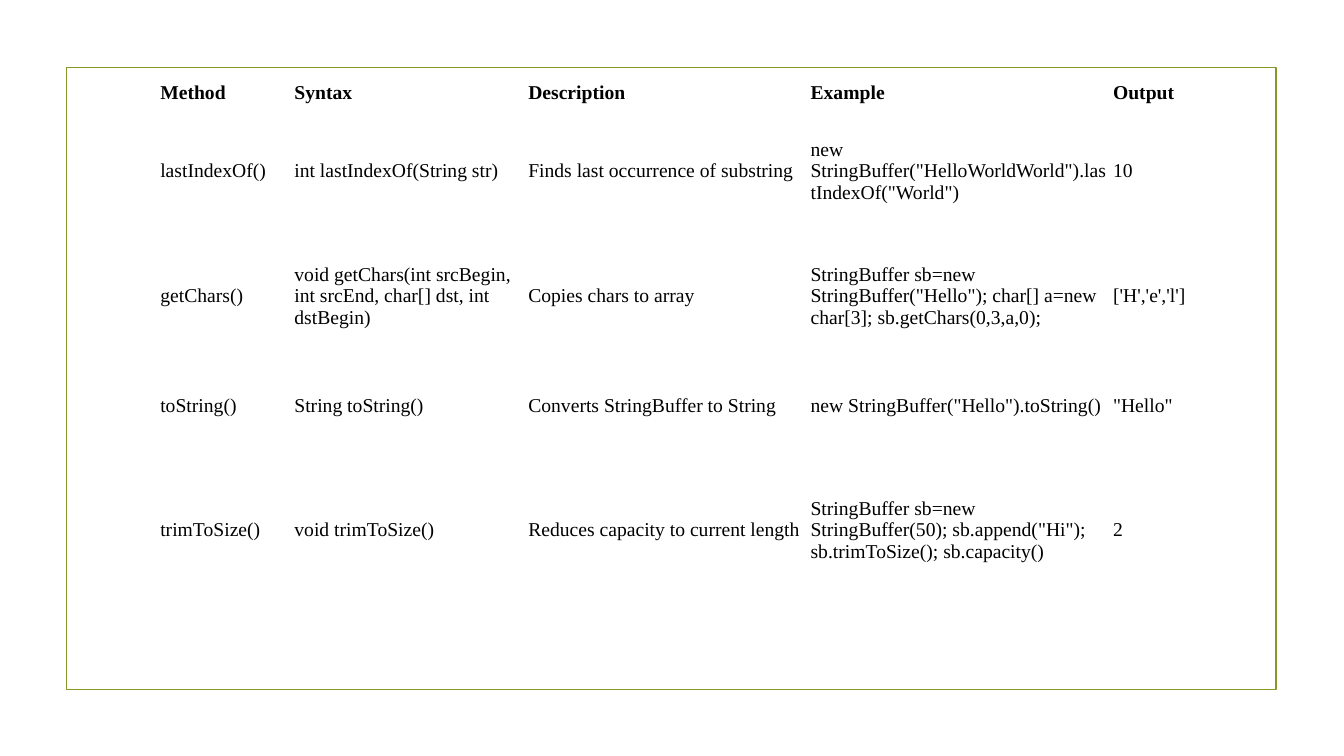
from pptx import Presentation
from pptx import util as u
from pptx.dml.color import RGBColor
from pptx.enum import shapes, text

ROWS = [
    ("Method", "Syntax", "Description", "Example", "Output"),
    ("lastIndexOf()", "int lastIndexOf(String str)", "Finds last occurrence of substring",
     'new StringBuffer("HelloWorldWorld").lastIndexOf("World")', "10"),
    ("getChars()", "void getChars(int srcBegin, int srcEnd, char[] dst, int dstBegin)",
     "Copies chars to array",
     'StringBuffer sb=new StringBuffer("Hello"); char[] a=new char[3]; sb.getChars(0,3,a,0);',
     "['H','e','l']"),
    ("toString()", "String toString()", "Converts StringBuffer to String",
     'new StringBuffer("Hello").toString()', '"Hello"'),
    ("trimToSize()", "void trimToSize()", "Reduces capacity to current length",
     'StringBuffer sb=new StringBuffer(50); sb.append("Hi"); sb.trimToSize(); sb.capacity()', "2"),
]
WIDTHS = [1.33, 2.32, 2.8, 3, 1.3]
HEIGHTS = [0.32, 1.24, 1.24, 0.93, 1.54]
FRAME = (0.66, 0.67, 12, 6.17)
COLORS = {"frame": "83992A", "text": "000000"}
CELL = {
    "margin_left": u.Inches(0.02), "margin_right": u.Inches(0.02),
    "margin_top": u.Inches(0.01), "margin_bottom": u.Inches(0.01),
    "vertical_anchor": text.MSO_ANCHOR.MIDDLE,
}
FONT = {"name": "Times New Roman", "size": u.Pt(14)}
FLAGS = {"first_row": False, "horz_banding": False}


def apply(item, values):
    for name, value in values.items():
        setattr(item, name, value)


def add_frame(slide):
    frame = slide.shapes.add_shape(shapes.MSO_SHAPE.RECTANGLE, *map(u.Inches, FRAME))
    frame.shadow.inherit = False
    frame.fill.background()
    frame.line.color.rgb = RGBColor.from_string(COLORS["frame"])
    frame.line.width = u.Pt(1.25)


def add_methods(slide):
    box = map(u.Inches, (1.57, 0.76, sum(WIDTHS), sum(HEIGHTS)))
    table = slide.shapes.add_table(len(ROWS), len(WIDTHS), *box).table
    apply(table, FLAGS)
    for column, width in zip(table.columns, WIDTHS):
        column.width = u.Inches(width)
    for row, height in zip(table.rows, HEIGHTS):
        row.height = u.Inches(height)
    for r, row in enumerate(ROWS):
        for c, label in enumerate(row):
            cell = table.cell(r, c)
            cell.text = label
            cell.fill.background()
            apply(cell, CELL)
            font = cell.text_frame.paragraphs[0].runs[0].font
            apply(font, {**FONT, "bold": r == 0})
            font.color.rgb = RGBColor.from_string(COLORS["text"])


def main():
    deck = Presentation()
    apply(deck, {"slide_width": u.Inches(13.33), "slide_height": u.Inches(7.5)})
    slide = deck.slides.add_slide(deck.slide_layouts[6])
    add_frame(slide)
    add_methods(slide)
    deck.save("out.pptx")


if __name__ == "__main__":
    main()
